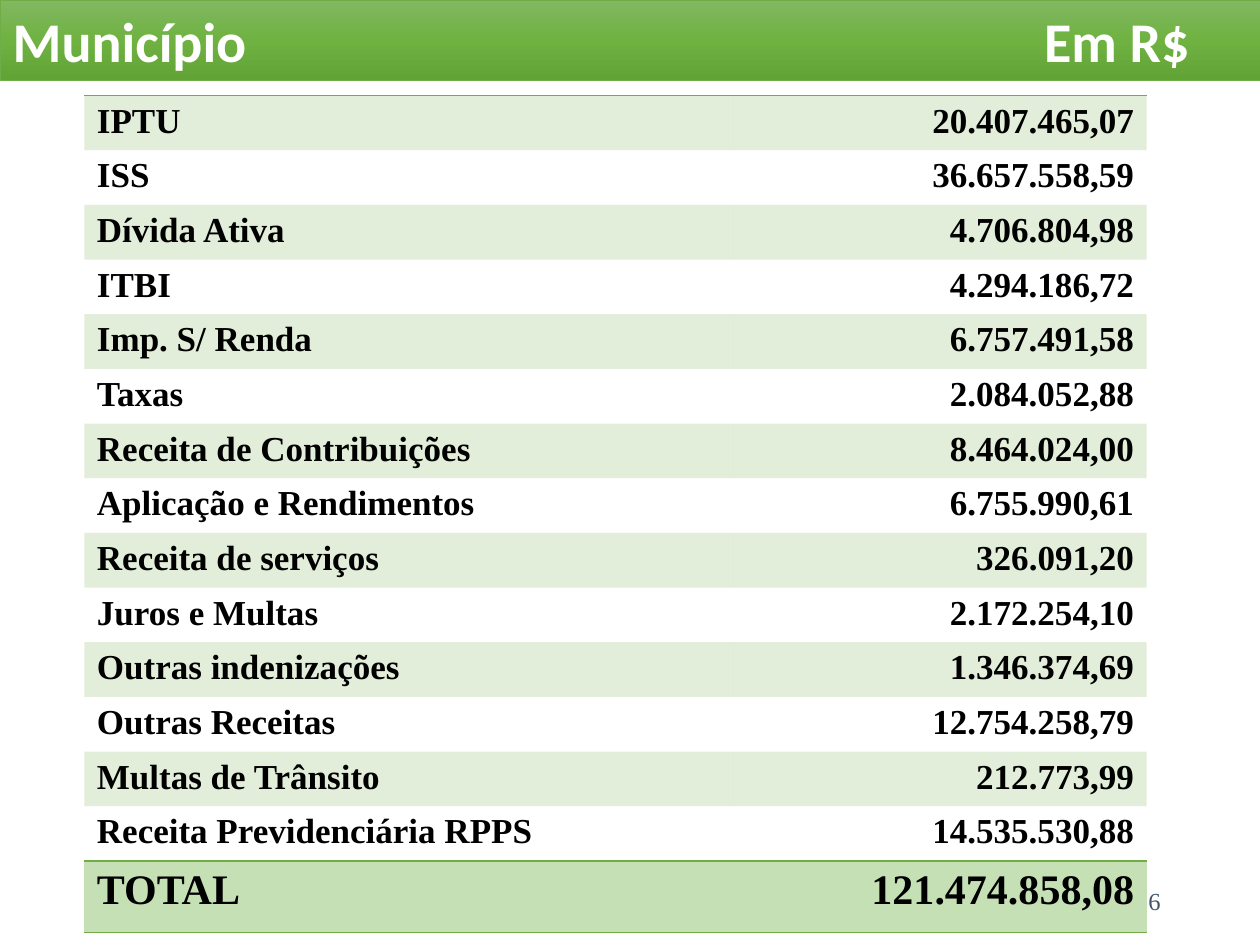
from copy import deepcopy
from typing import NamedTuple

from lxml.etree import SubElement
from pptx import Presentation
from pptx.dml.color import RGBColor
from pptx.enum.text import MSO_ANCHOR, MSO_AUTO_SIZE, PP_ALIGN
from pptx.oxml import parse_xml
from pptx.oxml.ns import nsdecls, qn
from pptx.util import Pt

GREEN = RGBColor(0x70, 0xAD, 0x47)
PALE = RGBColor(0xC5, 0xE0, 0xB4)
SLATE = RGBColor(0x44, 0x54, 0x6A)
BLACK = RGBColor(0, 0, 0)
WHITE = RGBColor(255, 255, 255)
SHADES = (RGBColor(0x81, 0xB8, 0x61), RGBColor(0x6F, 0xB2, 0x42),
          RGBColor(0x62, 0xA3, 0x36))
SERIF = "Times New Roman"
ROW, LAST = 31.25, 41


class Item(NamedTuple):
    label: str
    value: str


ITEMS = [
    Item("IPTU", "20.407.465,07"),
    Item("ISS", "36.657.558,59"),
    Item("Dívida Ativa", "4.706.804,98"),
    Item("ITBI", "4.294.186,72"),
    Item("Imp. S/ Renda", "6.757.491,58"),
    Item("Taxas", "2.084.052,88"),
    Item("Receita de Contribuições", "8.464.024,00"),
    Item("Aplicação e Rendimentos", "6.755.990,61"),
    Item("Receita de serviços", "326.091,20"),
    Item("Juros e Multas", "2.172.254,10"),
    Item("Outras indenizações", "1.346.374,69"),
    Item("Outras Receitas", "12.754.258,79"),
    Item("Multas de Trânsito", "212.773,99"),
    Item("Receita Previdenciária RPPS", "14.535.530,88"),
    Item("TOTAL", "121.474.858,08"),
]


def style(para, size: float, color: RGBColor, name: str, bold: bool) -> None:
    font = para.font
    font.size, font.name, font.bold = Pt(size), name, bold
    font.color.rgb = color


def shade(shape) -> None:
    """Fill the shape from top to bottom with the three SHADES."""
    fill = shape.fill
    fill.gradient()
    fill.gradient_angle = 270
    stops = shape._element.spPr.find(qn("a:gradFill")).find(qn("a:gsLst"))
    stops.insert(1, deepcopy(stops[0]))
    for i, (stop, color) in enumerate(zip(fill.gradient_stops, SHADES)):
        stop.position = i / 2
        stop.color.rgb = color


def add_header(slide) -> None:
    bar = slide.shapes.title
    bar.left, bar.top, bar.width, bar.height = Pt(0), Pt(0), Pt(720), Pt(46)
    shade(bar)
    bar.line.color.rgb = GREEN
    bar.line.width = Pt(0.5)
    frame = bar.text_frame
    frame.auto_size = MSO_AUTO_SIZE.NONE
    frame.vertical_anchor = MSO_ANCHOR.MIDDLE
    para = frame.paragraphs[0]
    para.text = "Município\tEm R$"
    para.alignment = PP_ALIGN.LEFT
    tabs = SubElement(para._p.get_or_add_pPr(), qn("a:tabLst"))
    SubElement(tabs, qn("a:tab"), pos=str(Pt(589.4)), algn="l")
    style(para, 32, WHITE, "Calibri", True)


def add_edge(cell, sides: str) -> None:
    """Draw green borders on the given sides, such as "TB"."""
    for i, side in enumerate(sides):
        edge = parse_xml(
            f'<a:ln{side} {nsdecls("a")} w="{Pt(1)}"><a:solidFill>'
            f'<a:srgbClr val="{GREEN}"/></a:solidFill></a:ln{side}>')
        cell._tc.get_or_add_tcPr().insert(i, edge)


def paint(cell, color: RGBColor, alpha: int = 100) -> None:
    cell.fill.solid()
    cell.fill.fore_color.rgb = color
    if alpha < 100:
        tone = cell._tc.tcPr.find(qn("a:solidFill"))[0]
        SubElement(tone, qn("a:alpha"), val=str(alpha * 1000))


def add_table(slide, items: list[Item]) -> None:
    end = len(items) - 1
    frame = slide.shapes.add_table(len(items), 2, Pt(48.2), Pt(54.6),
                                   Pt(607), Pt(end * ROW + LAST))
    table = frame.table
    table.first_row = table.horz_banding = False
    # "No Style, No Grid"
    table._tbl.tblPr.find(qn("a:tableStyleId")).text = \
        "{2D5ABB26-0587-4C30-8999-92F81FD0307C}"
    table.columns[0].width, table.columns[1].width = Pt(370.8), Pt(236.2)
    for r, item in enumerate(items):
        total = r == end
        table.rows[r].height = Pt(LAST if total else ROW)
        for c, text in enumerate(item):
            cell = table.cell(r, c)
            para = cell.text_frame.paragraphs[0]
            para.text = text
            para.alignment = PP_ALIGN.RIGHT if c else PP_ALIGN.LEFT
            style(para, 24 if total else 20, BLACK, SERIF, True)
            if total:
                paint(cell, PALE)
                add_edge(cell, "TB")
            elif r % 2 == 0:
                paint(cell, GREEN, 20)
            else:
                cell.fill.background()
            if r == 0:
                add_edge(cell, "T")


def add_number(slide, text: str) -> None:
    box = slide.shapes.add_textbox(Pt(508.3), Pt(500.4), Pt(162), Pt(28.8))
    frame = box.text_frame
    frame.word_wrap = True
    frame.vertical_anchor = MSO_ANCHOR.MIDDLE
    para = frame.paragraphs[0]
    para.text = text
    para.alignment = PP_ALIGN.RIGHT
    style(para, 14, SLATE, SERIF, False)


def main() -> None:
    deck = Presentation()
    deck.slide_width, deck.slide_height = Pt(720), Pt(540)
    slide = deck.slides.add_slide(deck.slide_layouts[5])
    add_number(slide, "6")
    add_header(slide)
    add_table(slide, ITEMS)
    deck.save("out.pptx")


if __name__ == "__main__":
    main()
